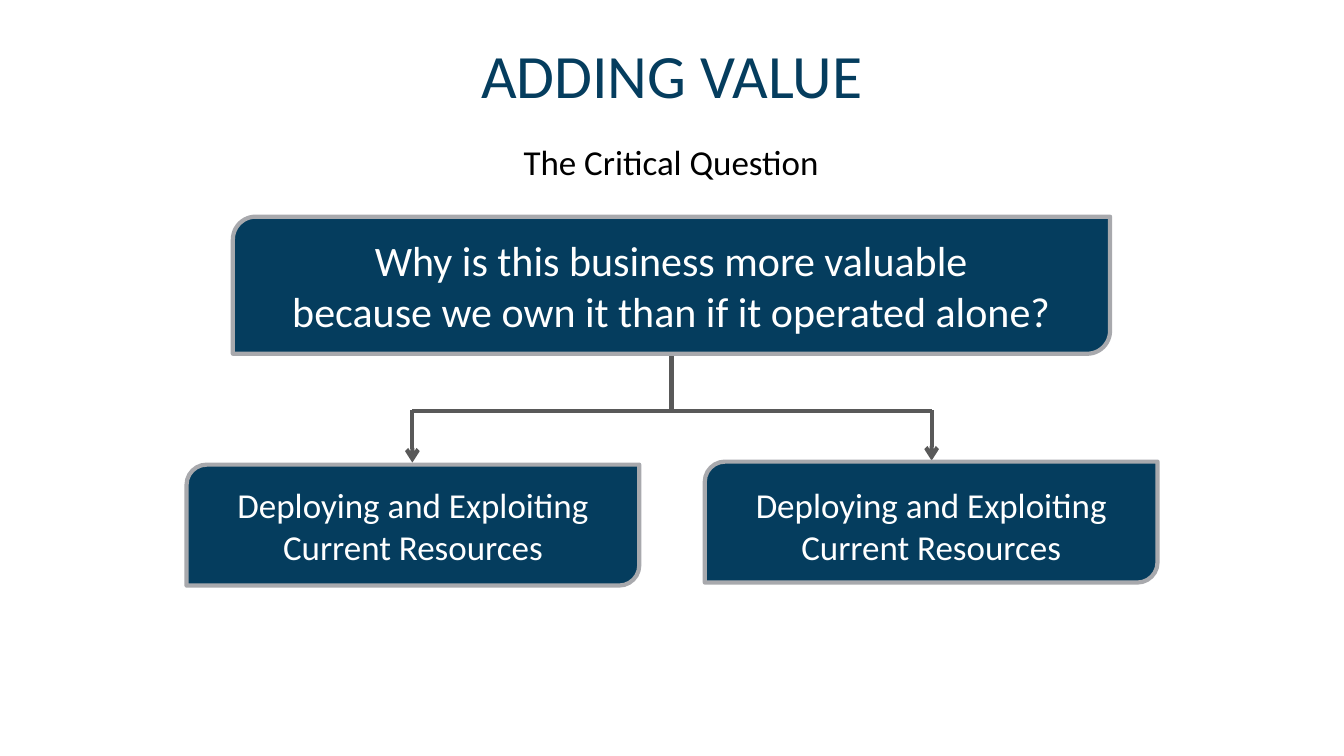
from dataclasses import dataclass

from lxml.etree import SubElement
from pptx import Presentation
from pptx.dml.color import RGBColor
from pptx.enum.shapes import MSO_CONNECTOR as Connector, MSO_SHAPE as Shape
from pptx.enum.text import MSO_ANCHOR as Anchor, MSO_AUTO_SIZE as AutoSize, PP_ALIGN as Align
from pptx.oxml.ns import qn
from pptx.slide import Slide
from pptx.text.text import TextFrame
from pptx.util import Emu, Pt

PX = 9144  # 100 px to the inch
NAVY, GREY, SILVER = "053D5E", "595959", "A8A9AD"
WHITE, BLACK = "FFFFFF", "000000"
LINE_WIDTH = Pt(3)


@dataclass(frozen=True)
class Panel:
    left: int
    top: int
    width: int
    height: int
    wording: str
    size: int
    inset_top: int = 0


@dataclass(frozen=True)
class Branch:
    x1: int
    y1: int
    x2: int
    y2: int
    arrow: bool = False


def px(length: int) -> Emu:
    return Emu(length * PX)


def colour(code: str) -> RGBColor:
    return RGBColor.from_string(code)


def write(frame: TextFrame, wording: str, size: int, code: str, inset_top: int = 0) -> None:
    layout = {
        "word_wrap": True, "auto_size": AutoSize.NONE, "vertical_anchor": Anchor.MIDDLE,
        "margin_left": 0, "margin_right": 0, "margin_top": px(inset_top), "margin_bottom": 0,
    }
    for attribute, value in layout.items():
        setattr(frame, attribute, value)
    paragraph = frame.paragraphs[0]
    paragraph.text = wording
    paragraph.alignment = Align.CENTER
    for run in paragraph.runs:
        for attribute, value in {"name": "Calibri", "size": Pt(size)}.items():
            setattr(run.font, attribute, value)
        run.font.color.rgb = colour(code)


def draw_panel(slide: Slide, panel: Panel) -> None:
    box = slide.shapes.add_shape(
        Shape.ROUND_2_DIAG_RECTANGLE,
        px(panel.left), px(panel.top), px(panel.width), px(panel.height))
    box.shadow.inherit = False
    box.fill.solid()
    box.fill.fore_color.rgb = colour(NAVY)
    box.line.color.rgb = colour(SILVER)
    box.line.width = LINE_WIDTH
    write(box.text_frame, panel.wording, panel.size, WHITE, panel.inset_top)


def draw_branch(slide: Slide, branch: Branch) -> None:
    connector = slide.shapes.add_connector(
        Connector.STRAIGHT, px(branch.x1), px(branch.y1), px(branch.x2), px(branch.y2))
    connector.line.color.rgb = colour(GREY)
    connector.line.width = LINE_WIDTH
    properties = connector._element.spPr
    if branch.arrow:
        SubElement(properties.find(qn("a:ln")), qn("a:tailEnd"), type="arrow")
    SubElement(properties, qn("a:effectLst"))


ANSWER = "Deploying and Exploiting\nCurrent Resources"
QUESTION = "Why is this business more valuable\nbecause we own it than if it operated alone?"
PANELS = [
    Panel(185, 461, 449, 120, ANSWER, 25),
    Panel(231, 215, 870, 136, QUESTION, 30),
    Panel(699, 458, 449, 120, ANSWER, 25, inset_top=6),
]
LEFT_X, STEM_X, RIGHT_X, BAR_Y = 409, 666, 924, 408
BRANCHES = [
    Branch(LEFT_X, BAR_Y - 1, LEFT_X, 459, arrow=True),
    Branch(RIGHT_X, BAR_Y - 1, RIGHT_X, 457, arrow=True),
    Branch(LEFT_X, BAR_Y, RIGHT_X, BAR_Y),
    Branch(STEM_X, 352, STEM_X, BAR_Y),
]


def main() -> None:
    deck = Presentation()
    deck.slide_width, deck.slide_height = px(1333), px(750)
    slide = deck.slides.add_slide(deck.slide_layouts[5])

    # Title and subtitle
    title = slide.shapes.title
    place = {"left": 0, "top": 31, "width": 1333, "height": 84}
    for attribute, value in place.items():
        setattr(title, attribute, px(value))
    write(title.text_frame, "ADDING VALUE", 44, NAVY)
    subtitle = slide.shapes.add_textbox(px(-1), px(134), px(1333), px(52))
    write(subtitle.text_frame, "The Critical Question", 25, BLACK)

    # Question splitting into two answers
    for branch in BRANCHES:
        draw_branch(slide, branch)
    for panel in PANELS:
        draw_panel(slide, panel)

    deck.save("out.pptx")


if __name__ == "__main__":
    main()
